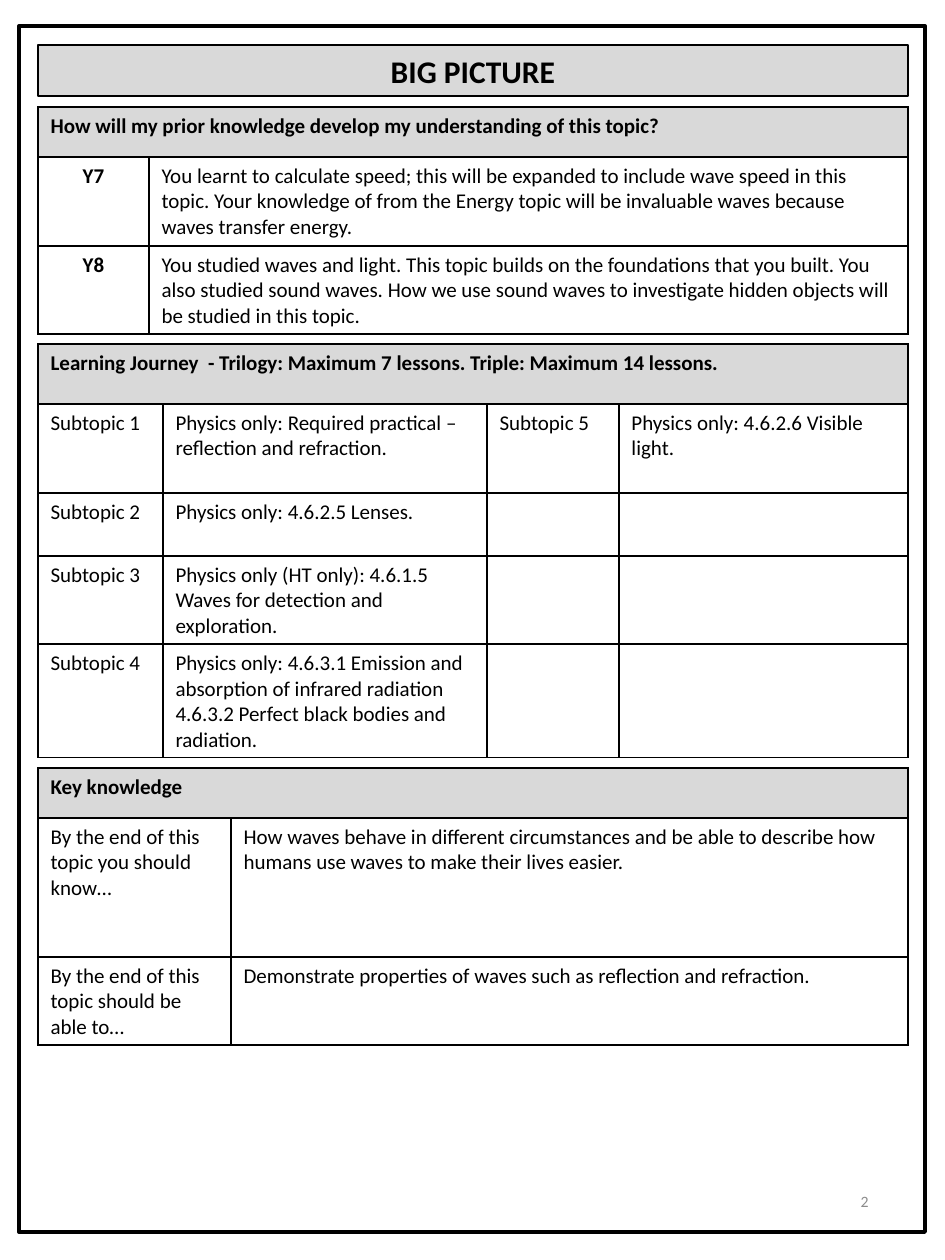
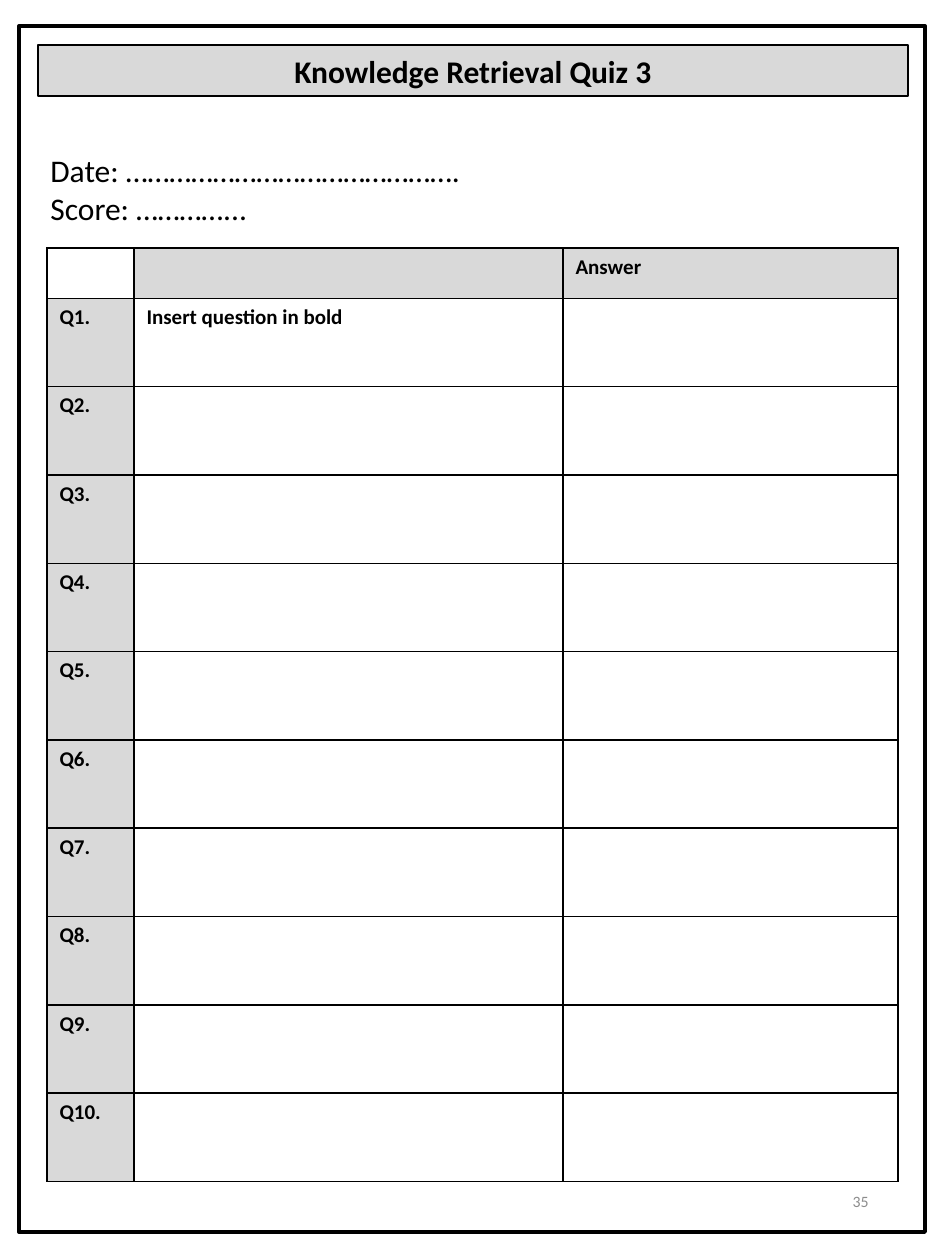
"""Build two study booklet pages: a topic overview and a quiz sheet."""
from dataclasses import dataclass

from lxml import etree
from pptx import Presentation
from pptx.dml.color import RGBColor
from pptx.enum.shapes import MSO_SHAPE
from pptx.enum.text import MSO_ANCHOR, MSO_AUTO_SIZE, PP_ALIGN
from pptx.oxml.ns import qn
from pptx.util import Pt

RECT = MSO_SHAPE.RECTANGLE
TOP, MIDDLE = MSO_ANCHOR.TOP, MSO_ANCHOR.MIDDLE
FIXED = MSO_AUTO_SIZE.NONE
LEFT, CENTER, RIGHT = PP_ALIGN.LEFT, PP_ALIGN.CENTER, PP_ALIGN.RIGHT
SCALE = 914400 / 126
TITLE_ONLY = 5
EDGES = ("a:lnL", "a:lnR", "a:lnT", "a:lnB")


@dataclass(frozen=True)
class Theme:
    """Hold the colours, font and sizes of every page."""
    ink: str = "000000"
    paper: str = "FFFFFF"
    band: str = "D9D9D9"
    faint: str = "8C8C8C"
    face: str = "Calibri"
    head: int = 18
    body: int = 12
    foot: int = 9
    frame: float = 2.25
    rule: float = 0.75
    grid: int = 1


THEME = Theme()
PAGE = (0, 0, 945, 1260)
FRAME = (19, 26, 906, 1206)
TITLE = (38, 45, 870, 51)
FOOT = (668, 1168, 213, 67)


def px(count):
    """Turn px into EMU."""
    return int(count * SCALE)


def apply(thing, values):
    """Set each named value on an object."""
    for name, value in values.items():
        setattr(thing, name, value)


def place(shape, box):
    """Move a shape to a box in px."""
    apply(shape, dict(zip(("left", "top", "width", "height"), map(px, box))))


def paint(shape, fill, width):
    """Give a shape its fill and black outline."""
    if fill:
        shape.fill.solid()
        shape.fill.fore_color.rgb = RGBColor.from_string(fill)
    else:
        shape.fill.background()
    shape.line.color.rgb = RGBColor.from_string(THEME.ink)
    shape.line.width = Pt(width)


def write(frame, text, size, bold=False, align=LEFT, color=THEME.ink):
    """Fill a text frame with lines in one format."""
    frame.text = text
    for para in frame.paragraphs:
        para.alignment = align
        for run in para.runs:
            apply(run.font, {"name": THEME.face, "size": Pt(size), "bold": bold})
            run.font.color.rgb = RGBColor.from_string(color)


def note(slide, box, text, size, anchor=TOP, **style):
    """Add a wrapped text box."""
    shape = slide.shapes.add_textbox(*map(px, box))
    apply(shape.text_frame, {"word_wrap": True, "vertical_anchor": anchor})
    write(shape.text_frame, text, size, **style)


def edge(cell):
    """Draw the four borders of a cell."""
    props = cell._tc.get_or_add_tcPr()
    for spot, tag in enumerate(EDGES):
        line = etree.Element(qn(tag), w=str(Pt(THEME.grid)))
        fill = etree.SubElement(line, qn("a:solidFill"))
        etree.SubElement(fill, qn("a:srgbClr"), val=THEME.ink)
        props.insert(spot, line)


def in_head(row, col):
    """Tell whether a cell is in the heading row."""
    return row == 0


def add_grid(slide, spot, cols, rows, cells, grey=in_head, bold=in_head,
             mid=None, span=True):
    """Add a ruled table whose rules pick grey, bold and centred cells."""
    box = (*spot, sum(cols), sum(rows))
    table = slide.shapes.add_table(len(rows), len(cols), *map(px, box)).table
    apply(table, {"first_row": False, "horz_banding": False})
    for col, width in zip(table.columns, cols):
        col.width = px(width)
    for row, height in zip(table.rows, rows):
        row.height = px(height)
    for r in range(len(rows)):
        for c in range(len(cols)):
            cell = table.cell(r, c)
            cell.fill.solid()
            tint = THEME.band if grey(r, c) else THEME.paper
            cell.fill.fore_color.rgb = RGBColor.from_string(tint)
            edge(cell)
            if c < len(cells[r]) and cells[r][c]:
                align = CENTER if mid and mid(r, c) else LEFT
                write(cell.text_frame, cells[r][c], THEME.body, bold(r, c), align)
    if span:
        table.cell(0, 0).merge(table.cell(0, len(cols) - 1))


def add_page(deck, title, number):
    """Add a page with its frame, title band and number."""
    slide = deck.slides.add_slide(deck.slide_layouts[TITLE_ONLY])
    frame = slide.shapes.add_shape(RECT, *map(px, FRAME))
    frame.shadow.inherit = False
    paint(frame, None, THEME.frame)
    band = slide.shapes.title
    place(band, TITLE)
    paint(band, THEME.band, THEME.rule)
    apply(band.text_frame, {"auto_size": FIXED, "vertical_anchor": MIDDLE})
    write(band.text_frame, title, THEME.head, True, CENTER)
    note(slide, FOOT, number, THEME.foot, MIDDLE, align=RIGHT, color=THEME.faint)
    return slide


def add_prior(slide, spot):
    """Add the table of prior learning."""
    def is_year(row, col):
        return row > 0 and col == 0

    add_grid(slide, spot, (111, 759), (50, 89, 88), [
        ["How will my prior knowledge develop my understanding of this topic?"],
        ["Y7", "You learnt to calculate speed; this will be expanded to include "
               "wave speed in this topic. Your knowledge of from the Energy topic "
               "will be invaluable waves because waves transfer energy."],
        ["Y8", "You studied waves and light. This topic builds on the foundations "
               "that you built. You also studied sound waves. How we use sound "
               "waves to investigate hidden objects will be studied in this topic."],
    ], bold=lambda r, c: r == 0 or c == 0, mid=is_year)


def add_route(slide, spot):
    """Add the table of lessons by subtopic."""
    add_grid(slide, spot, (125, 324, 132, 289), (60, 89, 63, 88, 113), [
        ["Learning Journey  - Trilogy: Maximum 7 lessons. Triple: Maximum 14 lessons."],
        ["Subtopic 1", "Physics only: Required practical – reflection and refraction.",
         "Subtopic 5", "Physics only: 4.6.2.6 Visible light."],
        ["Subtopic 2", "Physics only: 4.6.2.5 Lenses."],
        ["Subtopic 3", "Physics only (HT only): 4.6.1.5 Waves for detection and "
                       "exploration."],
        ["Subtopic 4", "Physics only: 4.6.3.1 Emission and absorption of infrared "
                       "radiation\n4.6.3.2 Perfect black bodies and radiation."],
    ])


def add_goals(slide, spot):
    """Add the table of key knowledge."""
    add_grid(slide, spot, (193, 677), (50, 139, 88), [
        ["Key knowledge"],
        ["By the end of this topic you should know…",
         "How waves behave in different circumstances and be able to describe how "
         "humans use waves to make their lives easier."],
        ["By the end of this topic should be able to…",
         "Demonstrate properties of waves such as reflection and refraction."],
    ])


def add_quiz(slide, spot, height=933, head=50, count=10):
    """Add the quiz table with equal question rows."""
    rows = [head] + [(height - head) / count] * count
    cells = [["", "", "Answer"]] + [[f"Q{n}."] for n in range(1, count + 1)]
    cells[1].append("Insert question in bold")
    add_grid(slide, spot, (87, 429, 335), rows, cells, span=False,
             grey=lambda r, c: (r == 0) != (c == 0), bold=lambda r, c: True)


def main():
    """Build and save both pages."""
    deck = Presentation()
    apply(deck, {"slide_width": px(PAGE[2]), "slide_height": px(PAGE[3])})
    topic = add_page(deck, "BIG PICTURE", "2")
    add_prior(topic, (38, 107))
    add_route(topic, (38, 344))
    add_goals(topic, (38, 768))
    quiz = add_page(deck, "Knowledge Retrieval Quiz 3", "35")
    note(quiz, (38, 145, 649, 89),
         "Date: ……………………………………….\nScore: …………...", THEME.head)
    add_quiz(quiz, (47, 248))
    deck.save("out.pptx")


if __name__ == "__main__":
    main()
